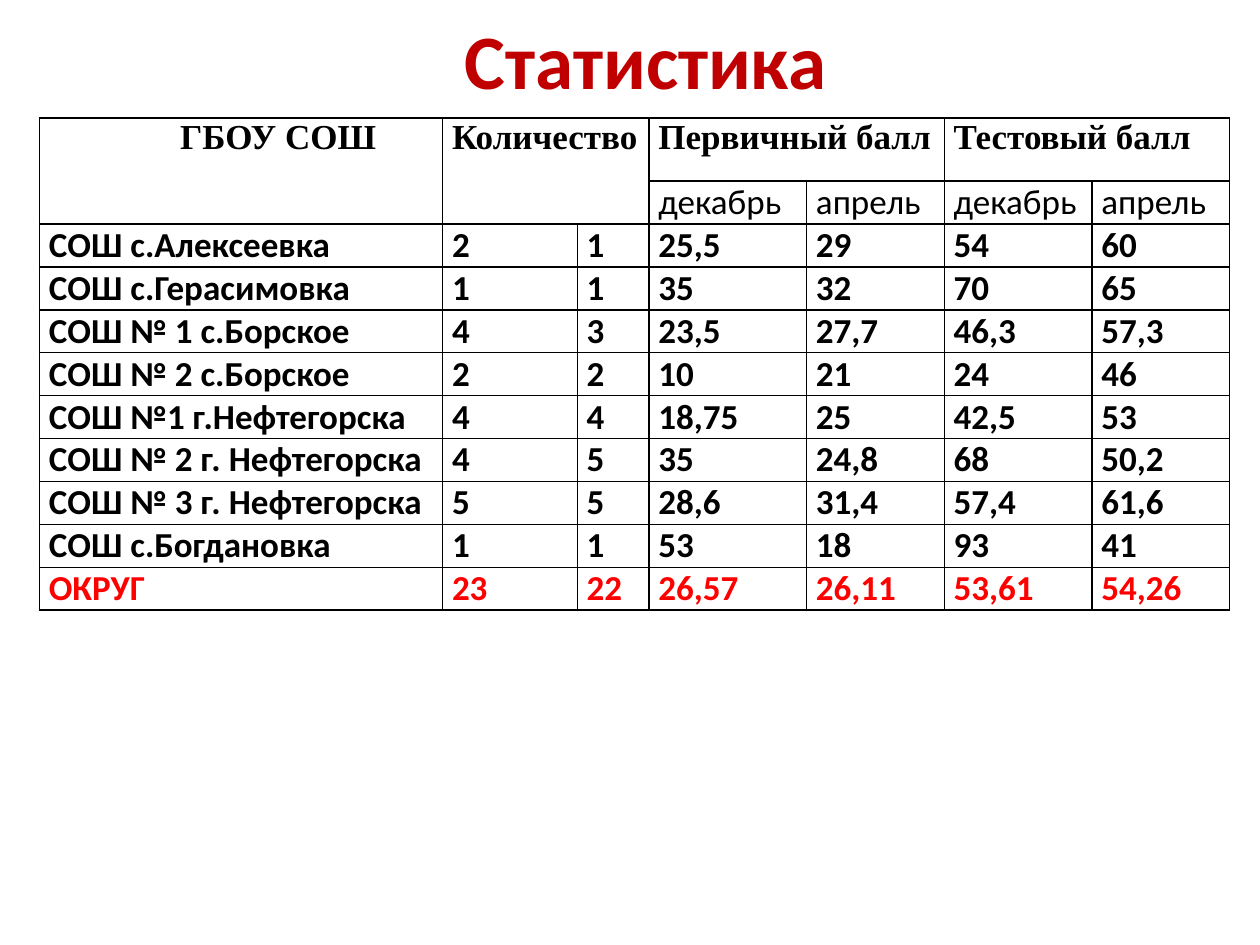
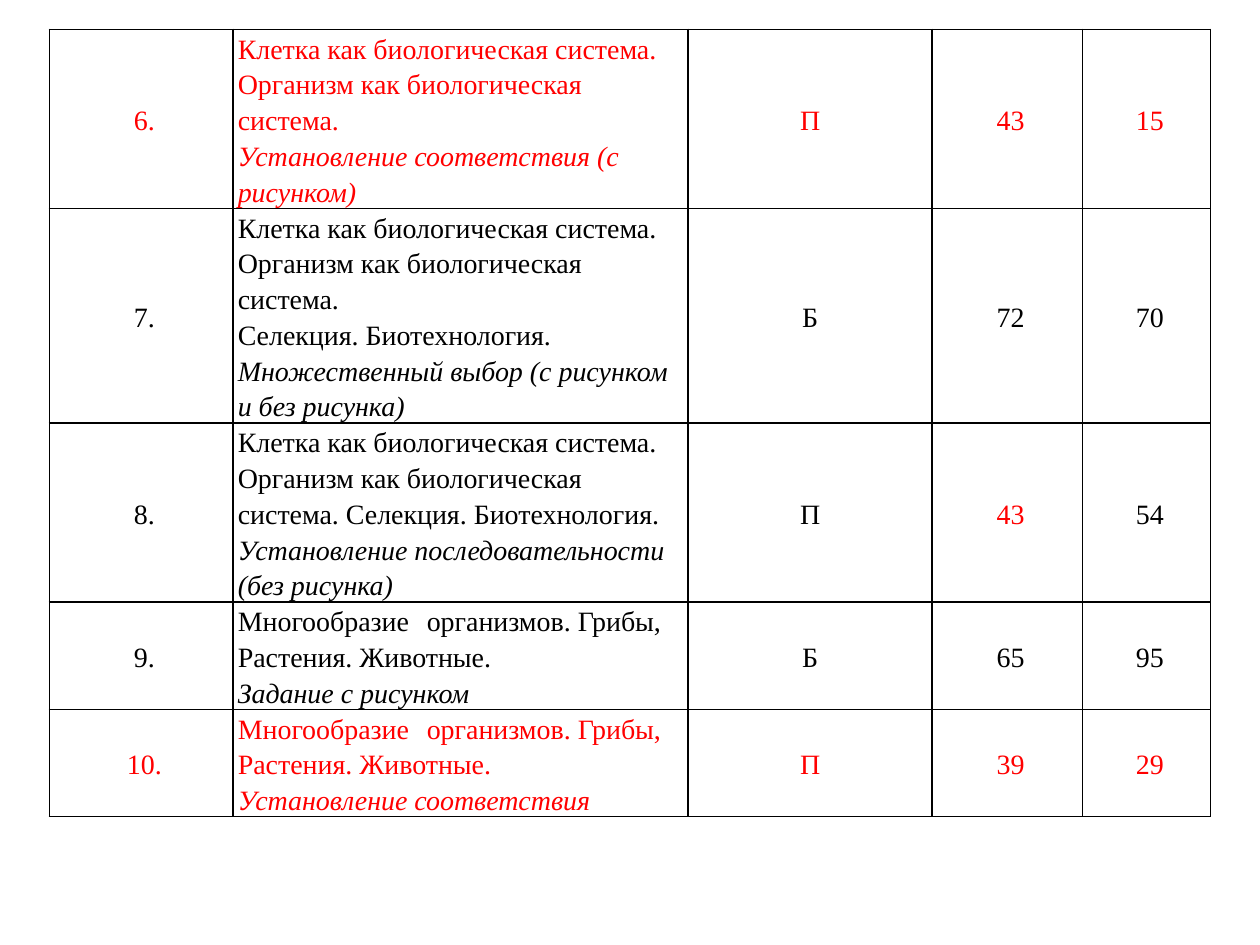
from lxml import etree
from pptx import Presentation
from pptx.dml.color import RGBColor
from pptx.enum.text import MSO_ANCHOR as Anchor, PP_ALIGN as Align
from pptx.oxml.ns import qn
from pptx.util import Pt

SANS, SERIF = "Calibri", "Times New Roman"
BLACK, RED, DARK_RED = "000000", "FF0000", "C00000"
TITLE_ONLY, BLANK = 5, 6
PASS_SCORE = 50

SCHOOLS = [
    ("СОШ с.Алексеевка", "2", "1", "25,5", "29", "54", "60"),
    ("СОШ с.Герасимовка", "1", "1", "35", "32", "70", "65"),
    ("СОШ № 1 с.Борское", "4", "3", "23,5", "27,7", "46,3", "57,3"),
    ("СОШ № 2 с.Борское", "2", "2", "10", "21", "24", "46"),
    ("СОШ №1 г.Нефтегорска", "4", "4", "18,75", "25", "42,5", "53"),
    ("СОШ № 2 г. Нефтегорска", "4", "5", "35", "24,8", "68", "50,2"),
    ("СОШ № 3 г. Нефтегорска", "5", "5", "28,6", "31,4", "57,4", "61,6"),
    ("СОШ с.Богдановка", "1", "1", "53", "18", "93", "41"),
    ("ОКРУГ", "23", "22", "26,57", "26,11", "53,61", "54,26"),
]

CELL_TOPIC = "Клетка как биологическая система. Организм как биологическая система."
BREEDING = "Селекция. Биотехнология."
DIVERSITY = "Многообразие\tорганизмов. Грибы, Растения. Животные."
TASKS = [
    ("6.", [CELL_TOPIC, "Установление соответствия (с рисунком)"], 5, "П", (43, 15)),
    ("7.", [CELL_TOPIC, BREEDING, "Множественный выбор (с рисунком и без рисунка)"], 6, "Б", (72, 70)),
    ("8.", [f"{CELL_TOPIC} {BREEDING}", "Установление последовательности (без рисунка)"], 5, "П", (43, 54)),
    ("9.", [DIVERSITY, "Задание с рисунком"], 3, "Б", (65, 95)),
    ("10.", [DIVERSITY, "Установление соответствия"], 3, "П", (39, 29)),
]


def rgb(value):
    return RGBColor.from_string(value)


class Builder:
    def __init__(self):
        self.deck = Presentation()
        self.deck.slide_width, self.deck.slide_height = Pt(720), Pt(540)
        self.page = None

    def add_page(self, layout):
        self.page = self.deck.slides.add_slide(self.deck.slide_layouts[layout])

    def style(self, para, size, font, color, bold=False, italic=False):
        for span in para.runs:
            span.font.size, span.font.name = Pt(size), font
            span.font.bold, span.font.italic = bold, italic
            span.font.color.rgb = rgb(color)

    def title(self, text, left, top, width, height):
        box = self.page.shapes.title
        box.left, box.top, box.width, box.height = map(Pt, (left, top, width, height))
        box.text_frame.text = text
        box.text_frame.vertical_anchor = Anchor.MIDDLE
        para = box.text_frame.paragraphs[0]
        para.alignment = Align.CENTER
        self.style(para, 44, SANS, DARK_RED, bold=True)

    def table(self, left, top, widths, heights, margin, anchor):
        frame = self.page.shapes.add_table(
            len(heights), len(widths), Pt(left), Pt(top), Pt(sum(widths)), Pt(sum(heights)))
        grid = frame.table
        grid.first_row = grid.horz_banding = False
        for column, width in zip(grid.columns, widths):
            column.width = Pt(width)
        for row, height in zip(grid.rows, heights):
            row.height = Pt(height)
        for cell in grid.iter_cells():
            cell.margin_left = cell.margin_right = Pt(margin)
            cell.margin_top = cell.margin_bottom = 0
            cell.vertical_anchor = anchor
            cell.fill.background()
            self.borders(cell)
        return grid

    def borders(self, cell):
        properties = cell._tc.get_or_add_tcPr()
        for index, side in enumerate(("lnL", "lnR", "lnT", "lnB")):
            line = etree.Element(qn(f"a:{side}"), w=str(Pt(1)))
            fill = etree.SubElement(line, qn("a:solidFill"))
            etree.SubElement(fill, qn("a:srgbClr"), val=BLACK)
            properties.insert(index, line)

    def fill_cell(self, cell, text, size, font, color, bold=False, align=None,
                  indent=0, spacing=None, italic_end=False):
        cell.text_frame.text = text
        paras = cell.text_frame.paragraphs
        for number, para in enumerate(paras, 1):
            para.alignment, para.line_spacing = align, spacing
            if indent:
                para._p.get_or_add_pPr().set("indent", str(Pt(indent)))
            self.style(para, size, font, color, bold, italic_end and number == len(paras))

    def statistics(self):
        self.add_page(TITLE_ONLY)
        self.title("Статистика", 45, 0, 648, 67.5)
        grid = self.table(22.5, 67.5, [230.4, 77, 41, 90, 78.7, 84.4, 78.5],
                          [36] + [24.5] * (len(SCHOOLS) + 1), 5.4, Anchor.TOP)
        headings = [
            ("ГБОУ СОШ", 0, 1, 0, 75),
            ("Количество", 1, 1, 2, 0),
            ("Первичный балл", 3, 0, 4, 0),
            ("Тестовый балл", 5, 0, 6, 0),
        ]
        for text, first, last_row, last_column, indent in headings:
            cell = grid.cell(0, first)
            cell.merge(grid.cell(last_row, last_column))
            self.fill_cell(cell, text, 20, SERIF, BLACK, True, Align.JUSTIFY, indent)
        for column, month in enumerate(("декабрь", "апрель") * 2, 3):
            self.fill_cell(grid.cell(1, column), month, 20, SANS, BLACK, align=Align.JUSTIFY)
        for row, school in enumerate(SCHOOLS, 2):
            color = RED if school is SCHOOLS[-1] else BLACK
            for column, text in enumerate(school):
                self.fill_cell(grid.cell(row, column), text, 20, SANS, color, True, Align.JUSTIFY)

    def tasks(self):
        self.add_page(BLANK)
        grid = self.table(28.2, 16.8, [105, 260, 139.5, 86, 73.2],
                          [lines * 20.45 for _, _, lines, _, _ in TASKS], 2.7, Anchor.MIDDLE)
        for row, (number, topics, _, level, scores) in enumerate(TASKS):
            color = RED if max(scores) < PASS_SCORE else BLACK
            self.fill_cell(grid.cell(row, 1), "\n".join(topics), 16, SERIF, color,
                           spacing=1.15, italic_end=True)
            centred = [(0, number, color, 3.6), (2, level, color, -5.8)]
            centred += [(column, str(score), RED if score < PASS_SCORE else BLACK, 3.6)
                        for column, score in enumerate(scores, 3)]
            for column, text, shade, indent in centred:
                self.fill_cell(grid.cell(row, column), text, 16, SERIF, shade,
                               align=Align.CENTER, indent=indent, spacing=1.15)


def main():
    builder = Builder()
    builder.statistics()
    builder.tasks()
    builder.deck.save("out.pptx")


if __name__ == "__main__":
    main()
